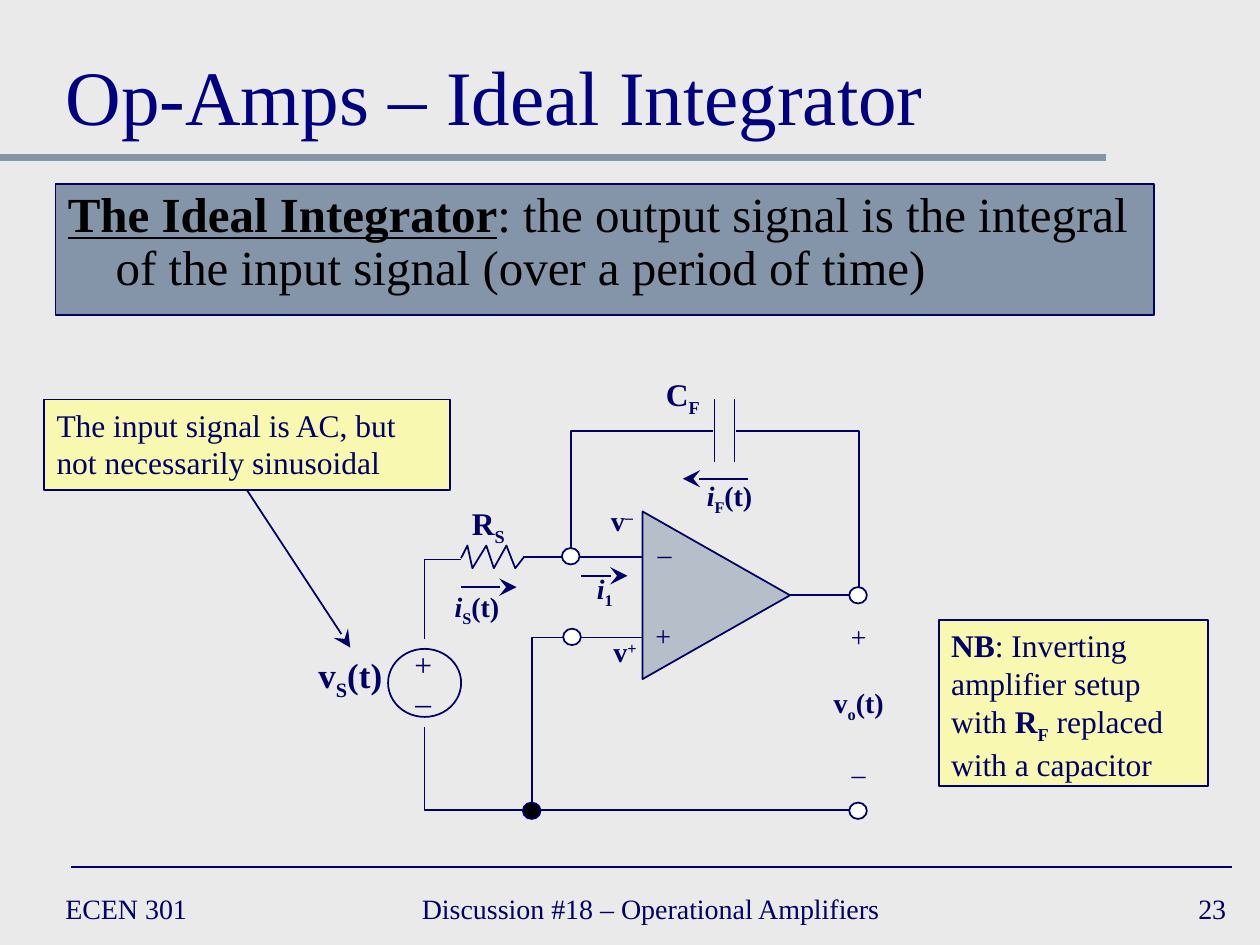
"""Build the ideal integrator slide with its op-amp circuit."""
from lxml import etree
from pptx import Presentation
from pptx import util as u
from pptx.dml import color
from pptx.enum import shapes, text
from pptx.oxml import ns

COLORS = {"background": "EAEAEA", "navy": "000066", "title": "000080", "slate": "8495A9",
          "yellow": "FFFF99", "white": "FFFFFF", "black": "000000"}
FONT = "Times New Roman"
BOLD, ITALIC = {"bold": True}, {"bold": True, "italic": True}
HEADING = {"bold": True, "underline": True}
LEFT, CENTER, RIGHT = text.PP_ALIGN.LEFT, text.PP_ALIGN.CENTER, text.PP_ALIGN.RIGHT
SUB, SUPER = -25000, 30000


def style_shape(shape, fill=None, opacity=100, width=1):
    """Set the fill, outline and shadow of a shape."""
    shape.shadow.inherit = False
    shape.line.color.rgb = color.RGBColor.from_string(COLORS["navy"])
    shape.line.width = u.Pt(width)
    if fill is None:
        shape.fill.background()
        return
    shape.fill.solid()
    shape.fill.fore_color.rgb = color.RGBColor.from_string(COLORS[fill])
    if opacity < 100:
        rgb = shape.fill._xPr.find(".//" + ns.qn("a:srgbClr"))
        etree.SubElement(rgb, ns.qn("a:alpha")).set("val", str(opacity * 1000))


def write_text(shape, paragraphs, size, align=LEFT, ink="navy", wrap=True,
               anchor=text.MSO_ANCHOR.TOP, gap=0):
    """Write paragraphs made of (text, font values, baseline) runs."""
    frame = shape.text_frame
    frame.word_wrap = wrap
    frame.vertical_anchor = anchor
    for index, runs in enumerate(paragraphs):
        paragraph = frame.add_paragraph() if index else frame.paragraphs[0]
        paragraph.alignment = align
        if index and gap:
            paragraph.space_before = u.Pt(gap)
        for words, values, baseline in runs:
            run = paragraph.add_run()
            run.text = words
            run.font.color.rgb = color.RGBColor.from_string(COLORS[ink])
            for name, value in {"name": FONT, "size": u.Pt(size), "bold": False, **values}.items():
                setattr(run.font, name, value)
            if baseline:
                run.font._element.set("baseline", str(baseline))


presentation = Presentation()
presentation.slide_width, presentation.slide_height = u.Inches(10), u.Inches(7.5)
slide = presentation.slides.add_slide(presentation.slide_layouts[5])
slide.background.fill.solid()
slide.background.fill.fore_color.rgb = color.RGBColor.from_string(COLORS["background"])

title = slide.shapes.title
title.left, title.top, title.width, title.height = map(u.Inches, (0.42, 0.17, 9.17, 1))
write_text(title, [[("Op-Amps – Ideal Integrator", {}, 0)]], 44, ink="title",
           anchor=text.MSO_ANCHOR.BOTTOM)

footers = [
    (0.42, 2.17, "ECEN 301", LEFT),
    (3.25, 3.83, "Discussion #18 – Operational Amplifiers", LEFT),
    (7.75, 2.08, "23", RIGHT),
]
for left, width, words, align in footers:
    footer = slide.shapes.add_textbox(u.Inches(left), u.Inches(7), u.Inches(width), u.Inches(0.42))
    write_text(footer, [[(words, {}, 0)]], 16, align, anchor=text.MSO_ANCHOR.MIDDLE)

panels = {}
panel_rows = [
    ("definition", (0.44, 1.46, 8.72, 1.04), "slate", 100, 0.75, 28, "black", [
        ("The Ideal Integrator", HEADING, 0),
        (": the output signal is the integral of the input signal (over a period of time)", {}, 0)]),
    ("input", (0.35, 3.17, 3.22, 0.72), "yellow", 70, 1, 18, "navy", [
        ("The input signal is AC, but not necessarily sinusoidal", {}, 0)]),
    ("note", (7.45, 4.92, 2.14, 1.32), "yellow", 70, 1, 18, "navy", [
        ("NB", BOLD, 0), (": Inverting amplifier setup with ", {}, 0),
        ("R", BOLD, 0), ("F", BOLD, SUB), (" replaced with a capacitor", {}, 0)]),
]
for name, box, fill, opacity, width, size, ink, runs in panel_rows:
    panel = slide.shapes.add_shape(shapes.MSO_SHAPE.RECTANGLE, *map(u.Inches, box))
    style_shape(panel, fill, opacity, width)
    write_text(panel, [runs], size, ink=ink)
    panels[name] = panel

definition = panels["definition"].text_frame.paragraphs[0]
definition.line_spacing = 0.9
indent = u.Inches(0.38)
for name, value in {"marL": indent, "indent": -indent}.items():
    definition._p.get_or_add_pPr().set(name, str(value))

amplifier = slide.shapes.add_shape(shapes.MSO_SHAPE.ISOSCELES_TRIANGLE,
                                   *map(u.Inches, (5.02, 4.14, 1.33, 1.17)))
amplifier.rotation = 90
style_shape(amplifier, "slate", 50)

wires = [
    [(4.53, 4.36), (4.53, 3.42), (5.66, 3.42)],
    [(6.82, 4.66), (6.82, 3.42), (5.84, 3.42)],
    [(4.47, 5.06), (4.22, 5.06), (4.22, 6.37)],
    [(3.37, 5.07), (3.37, 4.44), (3.66, 4.44)],
    [(4.15, 6.43), (3.37, 6.43), (3.37, 5.77)],
    [(3.66, 4.43), (3.71, 4.33), (3.75, 4.51), (3.86, 4.33), (3.92, 4.51),
     (4.02, 4.33), (4.09, 4.51), (4.16, 4.42)],
]
for wire in wires:
    points = [(u.Inches(x), u.Inches(y)) for x, y in wire]
    builder = slide.shapes.build_freeform(*points[0])
    builder.add_line_segments(points[1:], close=False)
    style_shape(builder.convert_to_shape())

lines = [
    ((0, 1.25), (8.78, 1.25), "slate", 4, False),
    ((0.56, 6.88), (9.78, 6.88), "navy", 1, False),
    ((4.6, 5.06), (5.1, 5.06), "navy", 1, False),
    ((4.6, 4.42), (5.1, 4.42), "navy", 1, False),
    ((6.26, 4.72), (6.76, 4.72), "navy", 1, False),
    ((4.29, 6.43), (6.74, 6.43), "navy", 1, False),
    ((4.15, 4.42), (4.46, 4.42), "navy", 1, False),
    ((5.67, 3.17), (5.67, 3.67), "navy", 1, False),
    ((5.83, 3.17), (5.83, 3.67), "navy", 1, False),
    ((4.61, 4.57), (4.98, 4.57), "navy", 1, True),
    ((5.94, 3.8), (5.42, 3.8), "navy", 1, True),
    ((3.66, 4.66), (4.1, 4.66), "navy", 1, True),
    ((1.96, 3.89), (2.78, 5.14), "navy", 1, True),
]
for start, end, ink, width, arrow in lines:
    connector = slide.shapes.add_connector(shapes.MSO_CONNECTOR.STRAIGHT,
                                           *map(u.Inches, start + end))
    connector.line.color.rgb = color.RGBColor.from_string(COLORS[ink])
    connector.line.width = u.Pt(width)
    if arrow:
        tail = etree.SubElement(connector.line._get_or_add_ln(), ns.qn("a:tailEnd"))
        for name, value in {"type": "stealth", "w": "lg", "len": "lg"}.items():
            tail.set(name, value)
    etree.SubElement(connector._element.spPr, ns.qn("a:effectLst"))
connector.begin_connect(panels["input"], 2)

ellipses = [(left, top, 0.14, 0.13, fill) for left, top, fill in [
    (4.46, 4.35, "white"), (4.47, 4.99, "white"), (6.74, 4.66, "white"),
    (6.74, 6.37, "white"), (4.15, 6.37, "black")]]
for *box, fill in ellipses + [(3.08, 5.15, 0.58, 0.54, None)]:
    ellipse = slide.shapes.add_shape(shapes.MSO_SHAPE.OVAL, *map(u.Inches, box))
    style_shape(ellipse, fill)

plus, minus = [("+", {}, 0)], [("–", {}, 0)]
output = [("v", BOLD, 0), ("o", BOLD, SUB), ("(t)", BOLD, 0)]
labels = [
    ((5.12, 4.21, 0.31, 0.37), 16, 0, [minus]),
    ((5.1, 4.86, 0.33, 0.37), 16, 0, [plus]),
    ((6.51, 4.87, 0.61, 1.44), 16, 18.5, [plus, output, minus]),
    ((3.19, 5.07, 0.34, 0.7), 18, 0, [plus, minus]),
    ((4.63, 4.49, 0.34, 0.37), 16, 0, [[("i", ITALIC, 0), ("1", BOLD, SUB)]]),
    ((5.18, 2.93, 0.48, 0.4), 18, 0, [[("C", BOLD, 0), ("F", BOLD, SUB)]]),
    ((3.64, 3.95, 0.47, 0.4), 18, 0, [[("R", BOLD, 0), ("S", BOLD, SUB)]]),
    ((2.42, 5.14, 0.72, 0.43), 20, 0, [[("v", BOLD, 0), ("S", BOLD, SUB), ("(t)", BOLD, 0)]]),
    ((4.76, 4.99, 0.4, 0.37), 16, 0, [[("v", BOLD, 0), ("+", BOLD, SUPER)]]),
    ((4.74, 3.95, 0.39, 0.37), 16, 0, [[("v", BOLD, 0), ("–", BOLD, SUPER)]]),
    ((5.5, 3.75, 0.58, 0.37), 16, 0, [[("i", ITALIC, 0), ("F", BOLD, SUB), ("(t)", BOLD, 0)]]),
    ((3.5, 4.63, 0.57, 0.37), 16, 0, [[("i", ITALIC, 0), ("S", BOLD, SUB), ("(t)", BOLD, 0)]]),
]
for box, size, gap, paragraphs in labels:
    label = slide.shapes.add_textbox(*map(u.Inches, box))
    write_text(label, paragraphs, size, CENTER, wrap=False, gap=gap)

presentation.save("out.pptx")
